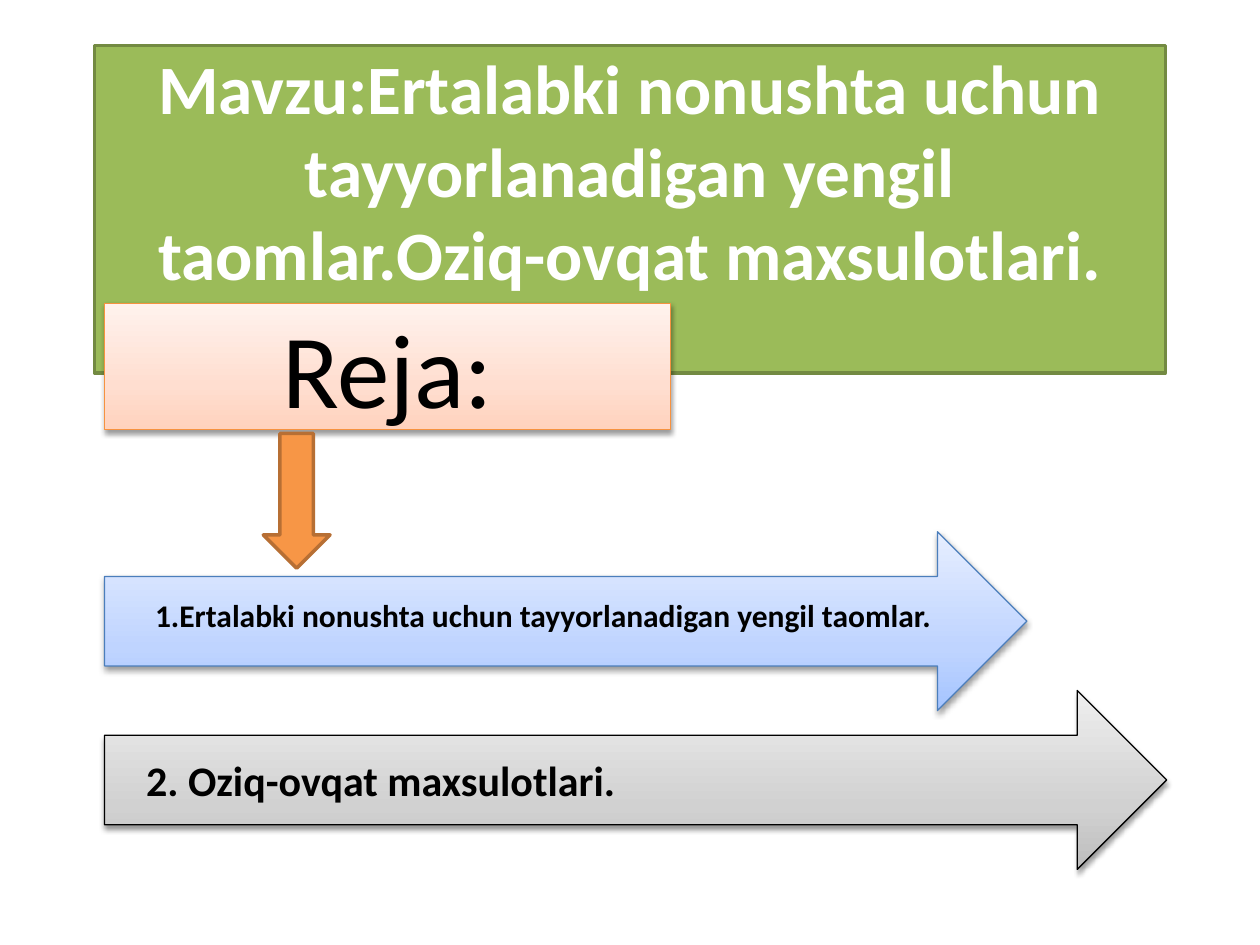
from lxml import etree
from pptx import Presentation
from pptx.dml.color import RGBColor
from pptx.enum import shapes, text
from pptx.oxml import ns
from pptx.util import Inches, Pt

COLORS = {
    "white": "FFFFFF", "black": "000000",
    "green": "9BBB59", "green_line": "738A42",
    "orange": "F79646", "orange_line": "B76F34",
    "peach_line": "F69240", "blue_line": "4B7EBC",
}
GRADIENTS = {
    "peach": ("FFD2BD", "FFDED0", "FFF2ED"),
    "blue": ("A4C4FF", "BFD4FF", "E6EEFF"),
    "gray": ("BDBDBD", "D1D1D1", "EEEEEE"),
}
STOPS = (0, 35, 100)
SHAPE = shapes.MSO_SHAPE
ALIGN = text.PP_ALIGN
ANCHOR = text.MSO_ANCHOR


def rgb(name):
    return RGBColor.from_string(COLORS[name])


def add_block(s, kind, box, line, width):
    sp = s.shapes.add_shape(kind, *(Inches(v) for v in box))
    sp.shadow.inherit = False
    sp.line.color.rgb = rgb(line)
    sp.line.width = Pt(width)
    return sp


def fill_solid(sp, color):
    sp.fill.solid()
    sp.fill.fore_color.rgb = rgb(color)


def sub(parent, tag, **attrs):
    el = etree.SubElement(parent, ns.qn(tag))
    for key, value in attrs.items():
        el.set(key, str(value))
    return el


def fill_raised(sp, gradient):
    """Bottom-to-top gradient fill with a soft shadow below."""
    sp.fill.gradient()
    sp_pr = sp._element.spPr
    grad = sp_pr.find(ns.qn("a:gradFill"))
    for child in list(grad):
        grad.remove(child)
    stops = sub(grad, "a:gsLst")
    for pos, color in zip(STOPS, GRADIENTS[gradient]):
        sub(sub(stops, "a:gs", pos=pos * 1000), "a:srgbClr", val=color)
    sub(grad, "a:lin", ang=270 * 60000, scaled=0)

    effects = sp_pr.find(ns.qn("a:effectLst"))
    shadow = sub(effects, "a:outerShdw", blurRad=Pt(3.1), dist=Pt(1.6),
                 dir=90 * 60000, rotWithShape=0)
    sub(sub(shadow, "a:srgbClr", val=COLORS["black"]), "a:alpha", val=38000)


def write(sp, words, size, color="black", bold=False, align=ALIGN.CENTER,
          anchor=ANCHOR.MIDDLE):
    tf = sp.text_frame
    tf.word_wrap = True
    tf.vertical_anchor = anchor
    p = tf.paragraphs[0]
    p.text = words
    p.alignment = align
    p.font.name = "Calibri"
    p.font.size = Pt(size)
    p.font.bold = bold
    p.font.color.rgb = rgb(color)
    return tf


def add_title(s, box):
    sp = add_block(s, SHAPE.RECTANGLE, box, "green_line", 2)
    fill_solid(sp, "green")
    tf = write(sp, "Mavzu:Ertalabki nonushta uchun tayyorlanadigan yengil "
               "taomlar.Oziq-ovqat maxsulotlari.", 39.6, "white", True,
               anchor=ANCHOR.TOP)
    tf.margin_top = 0


def add_plan_heading(s, box):
    """Heading box with a down arrow hanging below it."""
    left, top, _, height = box
    sp = add_block(s, SHAPE.RECTANGLE, box, "peach_line", 0.75)
    fill_raised(sp, "peach")
    write(sp, "Reja:", 60)

    arrow_box = (left + 1.26, top + height + 0.03, 0.53, 1.07)
    arrow = add_block(s, SHAPE.DOWN_ARROW, arrow_box, "orange_line", 2)
    fill_solid(arrow, "orange")


def add_plan_item(s, box, words, size, gradient, line, align):
    sp = add_block(s, SHAPE.RIGHT_ARROW, box, line, 0.75)
    fill_raised(sp, gradient)
    return write(sp, words, size, bold=True, align=align)


def main():
    prs = Presentation()
    prs.slide_width, prs.slide_height = Inches(10), Inches(7.5)
    s = prs.slides.add_slide(prs.slide_layouts[6])

    add_title(s, (0.75, 0.36, 8.5, 2.6))
    add_plan_heading(s, (0.83, 2.41, 4.49, 1))
    second = add_plan_item(s, (0.83, 5.48, 8.43, 1.42),
                           "2. Oziq-ovqat maxsulotlari.", 24,
                           "gray", "black", ALIGN.LEFT)
    second.margin_left = Inches(0.33)
    first = add_plan_item(
        s, (0.83, 4.22, 7.32, 1.42),
        "1.Ertalabki nonushta uchun tayyorlanadigan yengil taomlar.", 18,
        "blue", "blue_line", ALIGN.CENTER)
    first.margin_bottom = Inches(0.15)

    prs.save("out.pptx")


if __name__ == "__main__":
    main()
